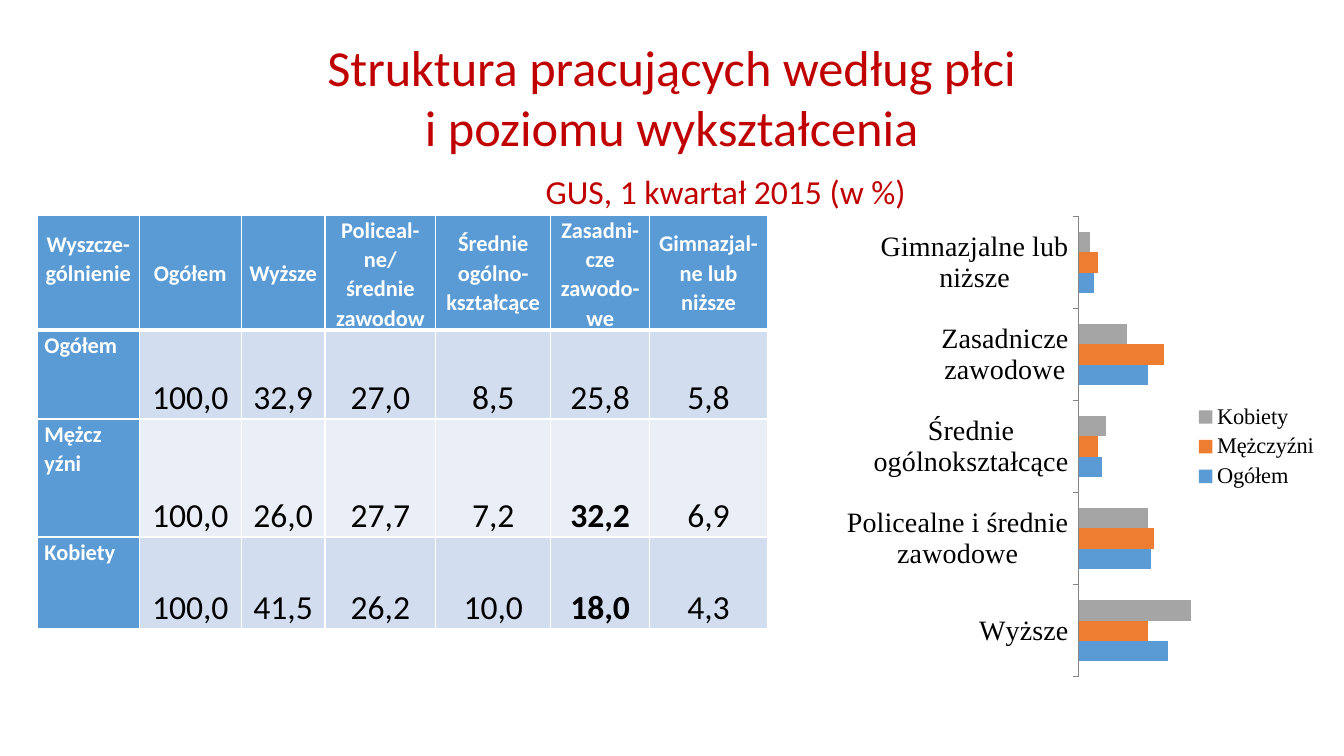
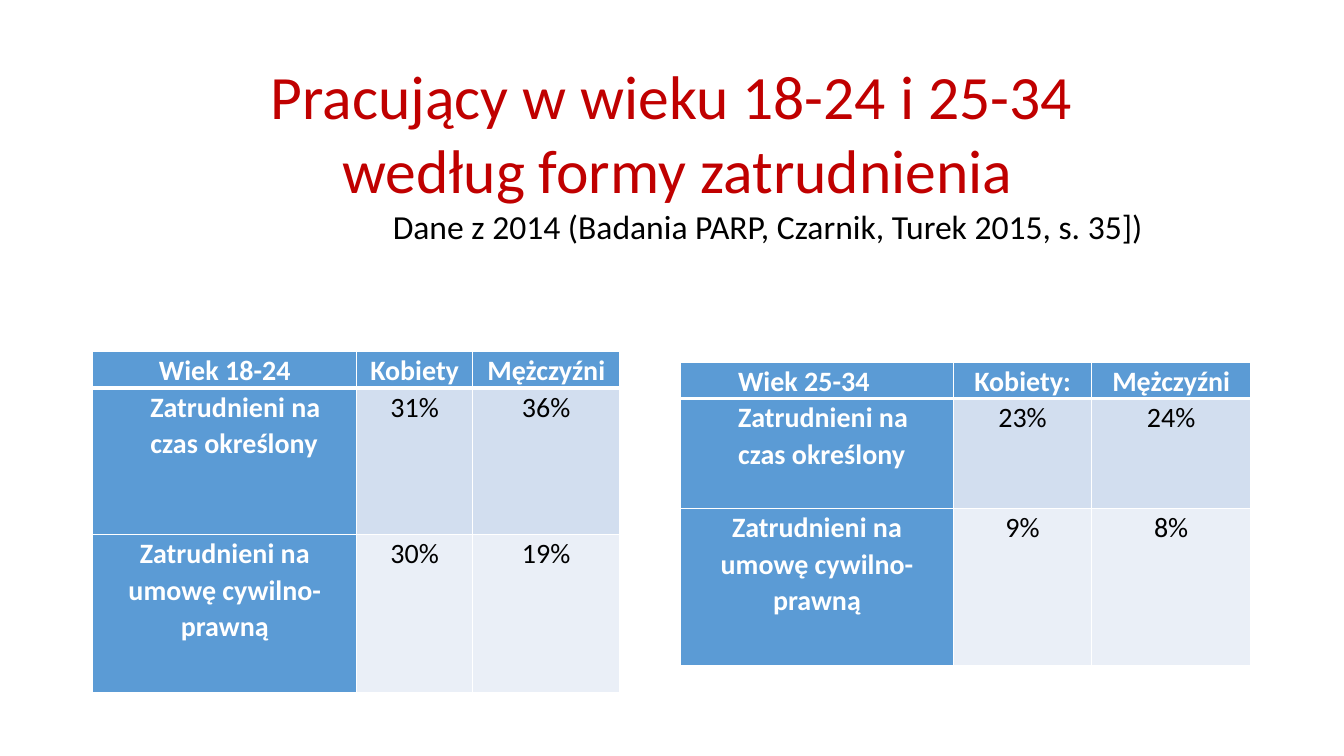
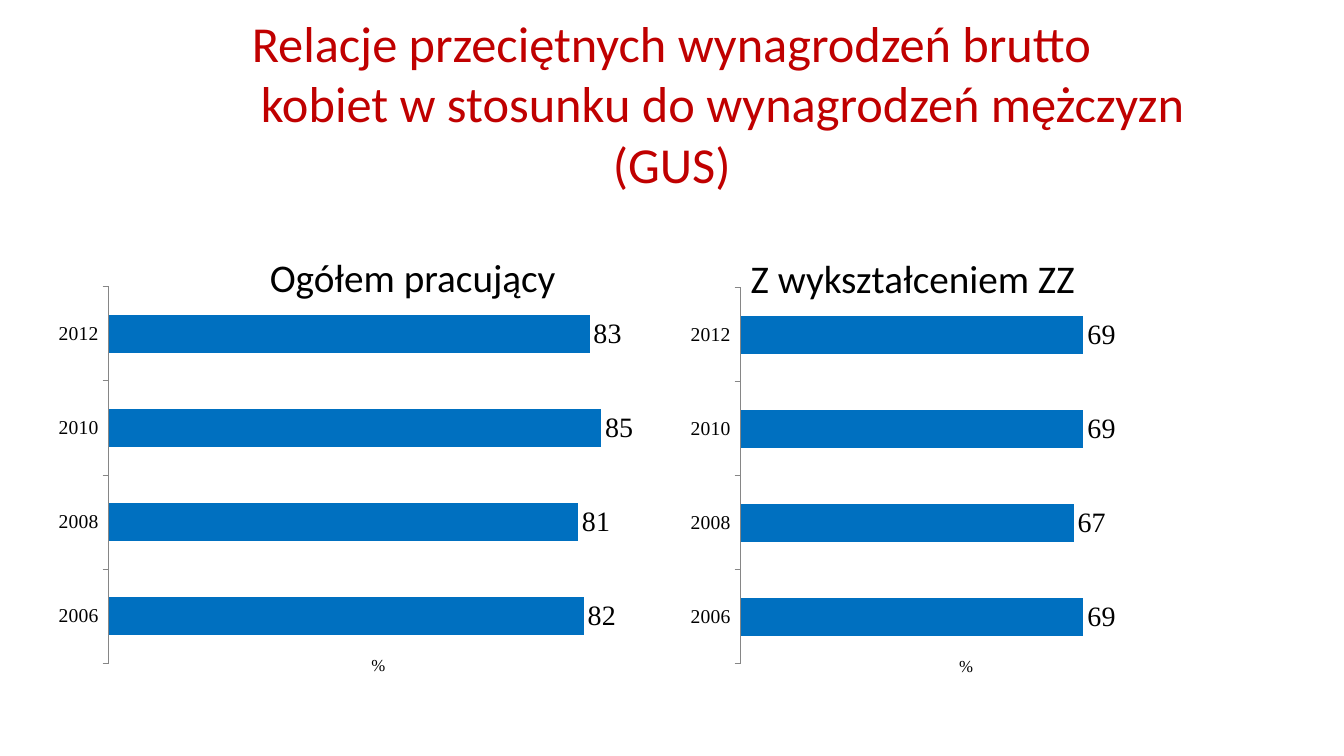
from pptx import Presentation
from pptx import util as u
from pptx.chart.data import CategoryChartData
from pptx.dml.color import RGBColor
from pptx.enum import chart as charts
from pptx.enum import text
from pptx.oxml import parse_xml
from pptx.oxml.ns import nsdecls

RED = RGBColor(0xC0, 0x00, 0x00)
BLACK = RGBColor(0x00, 0x00, 0x00)
WHITE = RGBColor(0xFF, 0xFF, 0xFF)
HEAD_BLUE = RGBColor(0x5B, 0x9B, 0xD5)
BAND_DARK = RGBColor(0xD2, 0xDE, 0xEF)
BAND_LIGHT = RGBColor(0xEA, 0xEF, 0xF7)
ORANGE = RGBColor(0xED, 0x7D, 0x31)
GREY = RGBColor(0xA5, 0xA5, 0xA5)
AXIS_GREY = RGBColor(0x86, 0x86, 0x86)
BAR_BLUE = RGBColor(0x00, 0x70, 0xC0)

SANS = "Calibri"
SERIF = "Times New Roman"
CENTER = text.PP_ALIGN.CENTER
LEFT = text.PP_ALIGN.LEFT
TOP = text.MSO_ANCHOR.TOP
MIDDLE = text.MSO_ANCHOR.MIDDLE
BOTTOM = text.MSO_ANCHOR.BOTTOM


def set_font(font, size, color=BLACK, bold=False, name=SANS):
    font.name, font.size, font.bold = name, u.Pt(size), bold
    font.color.rgb = color


def set_indent(para, indent):
    para._p.get_or_add_pPr().set("marL", str(u.Cm(indent)))


def add_text(page, left, top, width, height):
    """Text box without insets; returns its text frame."""
    frame = page.shapes.add_textbox(u.Cm(left), u.Cm(top), u.Cm(width), u.Cm(height)).text_frame
    frame.word_wrap = True
    frame.margin_left = frame.margin_right = frame.margin_top = frame.margin_bottom = 0
    return frame


def add_title(page, top, lines):
    """Centred title; each line is (text, size, colour, indent, space before)."""
    frame = add_text(page, 2.18, top, 29.5, 4.6)
    for number, (words, size, color, indent, before) in enumerate(lines):
        para = frame.paragraphs[0] if number == 0 else frame.add_paragraph()
        para.text, para.alignment = words, CENTER
        if indent:
            set_indent(para, indent)
        if before:
            para.space_before = u.Pt(before)
        set_font(para.font, size, color)


# Tables
def add_borders(cell, bottom):
    props = cell._tc.get_or_add_tcPr()
    for place, (side, points) in enumerate((("L", 1), ("R", 1), ("T", 1), ("B", bottom))):
        props.insert(place, parse_xml(
            f'<a:ln{side} {nsdecls("a")} w="{u.Pt(points)}"><a:solidFill>'
            f'<a:srgbClr val="{WHITE}"/></a:solidFill></a:ln{side}>'))


def add_table(page, left, top, widths, heights, rows, label_size, value_size,
              head_anchor, value_anchor):
    """Table with a blue header row and label column, and banded values."""
    table = page.shapes.add_table(
        len(rows), len(widths), u.Cm(left), u.Cm(top),
        u.Cm(sum(widths)), u.Cm(sum(heights))).table
    for column, width in zip(table.columns, widths):
        column.width = u.Cm(width)
    for row, height in zip(table.rows, heights):
        row.height = u.Cm(height)
    for y, row in enumerate(rows):
        for x, words in enumerate(row):
            cell = table.cell(y, x)
            is_label = y == 0 or x == 0
            cell.margin_left = cell.margin_right = u.Cm(0.18)
            cell.margin_top = cell.margin_bottom = 0
            cell.vertical_anchor = head_anchor if y == 0 else TOP if x == 0 else value_anchor
            cell.fill.solid()
            cell.fill.fore_color.rgb = HEAD_BLUE if is_label else BAND_DARK if y % 2 else BAND_LIGHT
            add_borders(cell, 3 if y == 0 else 1)
            cell.text = words
            for para in cell.text_frame.paragraphs:
                para.alignment, para.line_spacing = CENTER, 1.07
                set_font(para.font, label_size if is_label else value_size,
                         WHITE if is_label else BLACK, is_label)
    return table


def indent_cell(cell):
    para = cell.text_frame.paragraphs[0]
    para.alignment = LEFT
    set_indent(para, 1.27)


# Charts
def add_bar_chart(page, box, categories, series, maximum, plot, category_size):
    """Horizontal bars without value axis; plot is x, y, w, h as shares of the chart."""
    data = CategoryChartData()
    data.categories = categories
    for name, values, _ in series:
        data.add_series(name, values)
    chart = page.shapes.add_chart(
        charts.XL_CHART_TYPE.BAR_CLUSTERED, *(u.Cm(side) for side in box), data).chart
    chart.has_title = chart.has_legend = False
    set_font(chart.font, 10)

    bars = chart.plots[0]
    bars.gap_width, bars.vary_by_categories = 150, False
    for item, (_, _, color) in zip(bars.series, series):
        item.format.fill.solid()
        item.format.fill.fore_color.rgb = color
        item.invert_if_negative = False

    axis = chart.category_axis
    axis.major_tick_mark = charts.XL_TICK_MARK.OUTSIDE
    axis.has_major_gridlines = False
    axis.format.line.color.rgb = AXIS_GREY
    axis.format.line.width = u.Pt(0.75)
    set_font(axis.tick_labels.font, category_size, name=SERIF)
    scale = chart.value_axis
    scale.visible = scale.has_major_gridlines = False
    scale.minimum_scale, scale.maximum_scale = 0, maximum

    area = chart._chartSpace.chart.plotArea
    for old in area.findall("{*}layout"):
        area.remove(old)
    sizes = "".join(f'<c:{key} val="{share}"/>' for key, share in zip("xywh", plot))
    area.insert(0, parse_xml(
        f'<c:layout {nsdecls("c")}><c:manualLayout><c:layoutTarget val="inner"/>'
        f'<c:xMode val="edge"/><c:yMode val="edge"/>{sizes}</c:manualLayout></c:layout>'))
    return chart


def add_wage_chart(page, box, values, plot_left, heading, heading_left):
    """Wage ratio by year with value labels, a heading and a unit mark."""
    chart = add_bar_chart(page, box, ["2012", "2010", "2008", "2006"],
                          [("%", values, BAR_BLUE)], 100,
                          (plot_left, 0.09, 0.87, 0.87), 14)
    chart.category_axis.reverse_order = True
    bars = chart.plots[0]
    bars.has_data_labels = True
    labels = bars.data_labels
    labels.show_value = True
    labels.position = charts.XL_LABEL_POSITION.OUTSIDE_END
    set_font(labels.font, 20, name=SERIF)

    left, top, width, _ = box
    para = add_text(page, left + heading_left, top + 0.13, 9, 1.2).paragraphs[0]
    para.text = heading
    set_font(para.font, 28)
    para = add_text(page, left, top + 10.25, width, 0.5).paragraphs[0]
    para.text, para.alignment = "%", CENTER
    set_font(para.font, 12, name=SERIF)


# Slides
def education_slide(page):
    add_title(page, 0.91, [
        ("Struktura pracujących według płci", 36, RED, 0, 0),
        ("i poziomu wykształcenia", 36, RED, 0, 0),
        ("GUS, 1 kwartał 2015 (w %)", 24, RED, 2.72, 10)])
    table = add_table(
        page, 0.94, 5.42, [2.57, 2.57, 2.11, 2.79, 2.9, 2.49, 2.97], [2.9, 2.24, 2.97, 2.31],
        [["Wyszcze-gólnienie", "Ogółem", "Wyższe", "Policeal-\nne/ średnie zawodow",
          "Średnie ogólno-kształcące", "Zasadni- cze zawodo-we", "Gimnazjal-ne lub niższe"],
         ["Ogółem", "100,0", "32,9", "27,0", "8,5", "25,8", "5,8"],
         ["Mężcz\nyźni", "100,0", "26,0", "27,7", "7,2", "32,2", "6,9"],
         ["Kobiety", "100,0", "41,5", "26,2", "10,0", "18,0", "4,3"]],
        16, 24, MIDDLE, BOTTOM)
    table.cell(0, 0).margin_bottom = u.Cm(0.73)
    for y in range(1, 4):
        for para in table.cell(y, 0).text_frame.paragraphs:
            para.alignment = LEFT
    for y in (2, 3):
        table.cell(y, 5).text_frame.paragraphs[0].font.bold = True

    chart = add_bar_chart(
        page, (21.34, 5.21, 12.17, 12.09),
        ["Wyższe", "Policealne i średnie zawodowe", "Średnie ogólnokształcące",
         "Zasadnicze zawodowe", "Gimnazjalne lub niższe"],
        [("Ogółem", (79, 64, 21, 62, 14), HEAD_BLUE),
         ("Mężczyźni", (62, 67, 17, 76, 17), ORANGE),
         ("Kobiety", (100, 62, 24, 43, 10), GREY)],
        120, (0.48, 0.02, 0.28, 0.96), 20)
    chart.has_legend = True
    chart.legend.position = charts.XL_LEGEND_POSITION.RIGHT
    chart.legend.include_in_layout = False
    set_font(chart.legend.font, 16, name=SERIF)


def employment_slide(page):
    add_title(page, 1.46, [
        ("Pracujący w wieku 18-24 i 25-34", 44, RED, 0, 0),
        ("według formy zatrudnienia", 44, RED, 0.3, 0),
        ("Dane z 2014 (Badania PARP, Czarnik, Turek 2015, s. 35])", 24, BLACK, 4.84, 0)])
    groups = [
        (2.34, 8.86, [6.65, 2.92, 3.71], [0.92, 3.69, 3.99],
         ["Wiek 18-24", "Kobiety", "Mężczyźni"], ["31%", "36%"], ["30%", "19%"]),
        (17.15, 9.12, [6.88, 3.48, 4.01], [0.92, 2.77, 3.96],
         ["Wiek 25-34", "Kobiety:", "Mężczyźni"], ["23%", "24%"], ["9%", "8%"])]
    for left, top, widths, heights, head, fixed_term, civil_law in groups:
        table = add_table(
            page, left, top, widths, heights,
            [head, ["Zatrudnieni na czas określony"] + fixed_term,
             ["Zatrudnieni na umowę cywilno-prawną"] + civil_law],
            20, 20, TOP, TOP)
        indent_cell(table.cell(1, 0))
    indent_cell(table.cell(0, 0))


def wage_slide(page):
    add_title(page, 0.3, [
        ("Relacje przeciętnych wynagrodzeń brutto", 36, RED, 0, 0),
        ("kobiet w stosunku do wynagrodzeń mężczyzn", 36, RED, 2.57, 0),
        ("(GUS)", 36, RED, 0, 0)])
    add_wage_chart(page, (1.14, 6.25, 16.79, 10.9), (83, 85, 81, 82), 0.095,
                   "Ogółem pracujący", 5.66)
    add_wage_chart(page, (17.15, 6.27, 14.4, 10.9), (69, 69, 67, 69), 0.105,
                   "Z wykształceniem ZZ", 1.77)


def main():
    deck = Presentation()
    deck.slide_width, deck.slide_height = u.Cm(33.87), u.Cm(19.05)
    for build in (education_slide, employment_slide, wage_slide):
        build(deck.slides.add_slide(deck.slide_layouts[6]))
    deck.save("out.pptx")


if __name__ == "__main__":
    main()
